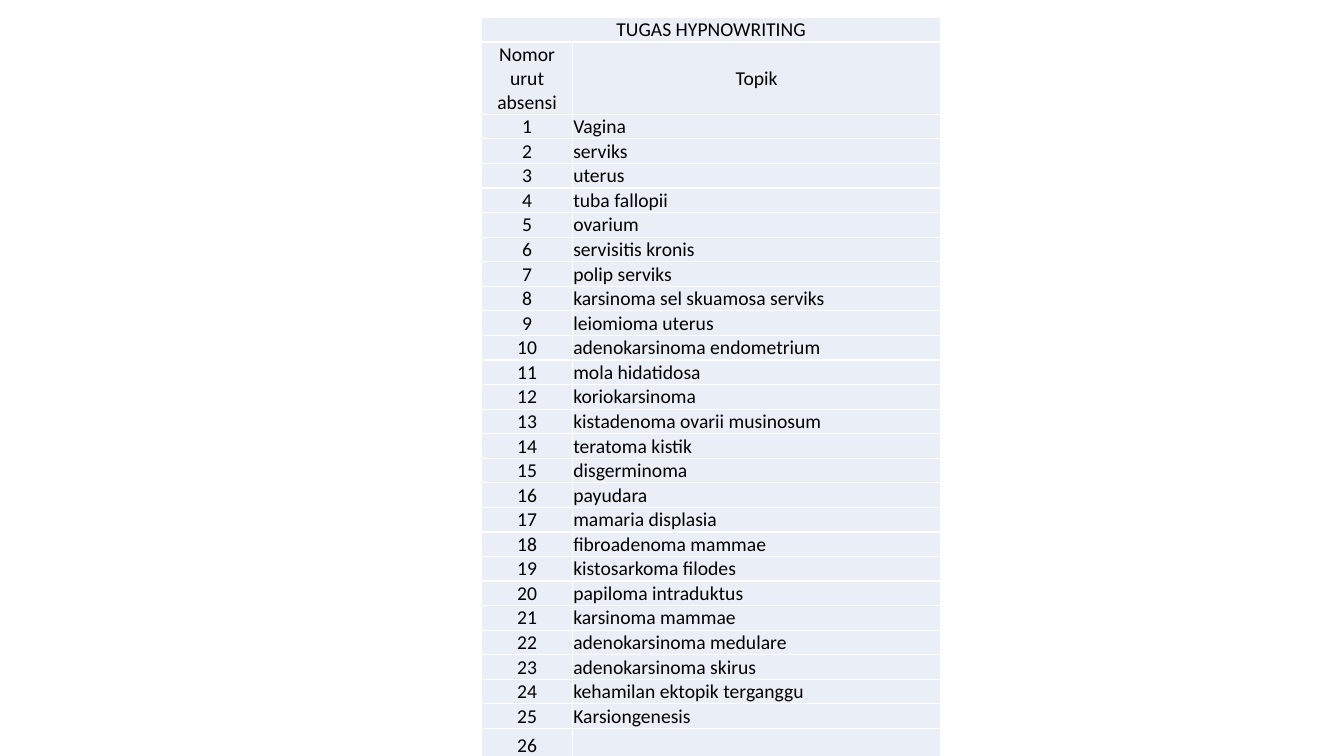
from lxml import etree
from pptx import Presentation
from pptx.dml.color import RGBColor
from pptx.enum.text import MSO_ANCHOR, PP_ALIGN
from pptx.oxml.ns import qn
from pptx.util import Pt

LEFT, CENTER = PP_ALIGN.LEFT, PP_ALIGN.CENTER
BOTTOM, MIDDLE = MSO_ANCHOR.BOTTOM, MSO_ANCHOR.MIDDLE
BLACK = RGBColor(0x00, 0x00, 0x00)
WHITE = RGBColor(0xFF, 0xFF, 0xFF)
PALE = RGBColor(0xEA, 0xEF, 0xF7)

WIDTHS = [65, 263]
TITLE_H, HEAD_H, ROW_H = 15.8, 46.8, 15.1
TOPICS = [
    "Vagina", "serviks", "uterus", "tuba fallopii", "ovarium",
    "servisitis kronis", "polip serviks", "karsinoma sel skuamosa serviks",
    "leiomioma uterus", "adenokarsinoma endometrium", "mola hidatidosa",
    "koriokarsinoma", "kistadenoma ovarii musinosum", "teratoma kistik",
    "disgerminoma", "payudara", "mamaria displasia", "fibroadenoma mammae",
    "kistosarkoma filodes", "papiloma intraduktus", "karsinoma mammae",
    "adenokarsinoma medulare", "adenokarsinoma skirus",
    "kehamilan ektopik terganggu", "Karsiongenesis", "",
]


def add_borders(cell, color=WHITE, width=1):
    props = cell._tc.get_or_add_tcPr()
    for side in ("a:lnL", "a:lnR", "a:lnT", "a:lnB"):
        line = etree.SubElement(props, qn(side), w=str(Pt(width)))
        fill = etree.SubElement(line, qn("a:solidFill"))
        etree.SubElement(fill, qn("a:srgbClr"), val=str(color))


def style_cell(cell):
    add_borders(cell)
    cell.fill.solid()
    cell.fill.fore_color.rgb = PALE
    cell.margin_left = cell.margin_right = cell.margin_top = Pt(0.5)
    cell.margin_bottom = 0


def set_text(cell, text, align=CENTER, anchor=BOTTOM, size=14, color=BLACK):
    cell.vertical_anchor = anchor
    para = cell.text_frame.paragraphs[0]
    para.alignment = align
    run = para.add_run()
    run.text = text
    run.font.name = "Calibri"
    run.font.size = Pt(size)
    run.font.color.rgb = color


def add_grid(slide, left, top, widths, heights):
    frame = slide.shapes.add_table(
        len(heights), len(widths), Pt(left), Pt(top),
        Pt(sum(widths)), Pt(sum(heights)))
    table = frame.table
    table.first_row = table.horz_banding = False
    for column, width in zip(table.columns, widths):
        column.width = Pt(width)
    for row, height in zip(table.rows, heights):
        row.height = Pt(height)
    for cell in table.iter_cells():
        style_cell(cell)
    return table


def main():
    deck = Presentation()
    deck.slide_width, deck.slide_height = Pt(960), Pt(540)
    slide = deck.slides.add_slide(deck.slide_layouts[6])

    heights = [TITLE_H, HEAD_H] + [ROW_H] * len(TOPICS)
    table = add_grid(slide, 344, 12.5, WIDTHS, heights)
    table.cell(0, 0).merge(table.cell(0, 1))
    set_text(table.cell(0, 0), "TUGAS HYPNOWRITING")
    set_text(table.cell(1, 0), "Nomor urut absensi", anchor=MIDDLE)
    set_text(table.cell(1, 1), "Topik", anchor=MIDDLE)
    for number, topic in enumerate(TOPICS, 1):
        set_text(table.cell(number + 1, 0), str(number))
        set_text(table.cell(number + 1, 1), topic, align=LEFT)

    deck.save("out.pptx")


if __name__ == "__main__":
    main()
